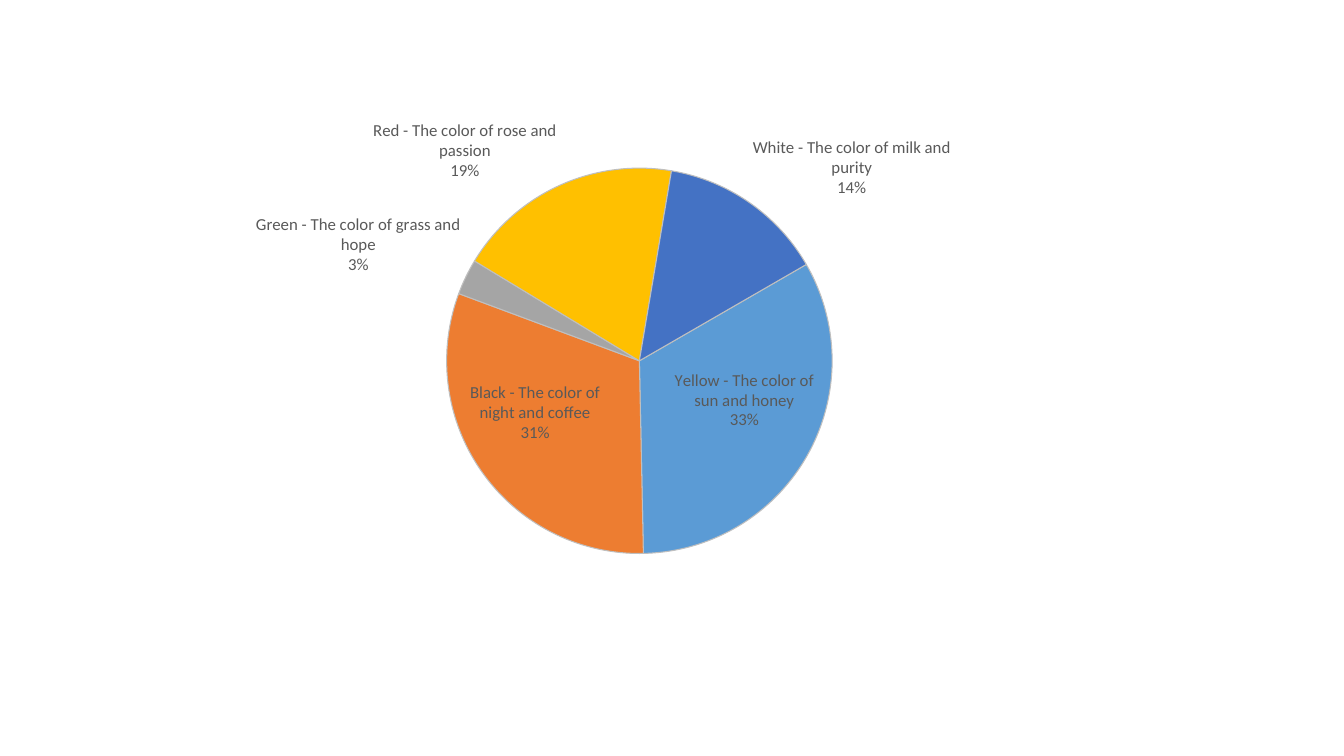
from lxml import etree
from pptx import Presentation
from pptx.chart.data import CategoryChartData
from pptx.dml.color import RGBColor
from pptx.enum.chart import XL_CHART_TYPE, XL_LABEL_POSITION
from pptx.oxml.ns import qn
from pptx.util import Inches, Pt

COLORS = {
    "Yellow - The color of sun and honey": "5B9BD5",
    "Black - The color of night and coffee": "ED7D31",
    "Green - The color of grass and hope": "A5A5A5",
    "Red - The color of rose and passion": "FFC000",
    "White - The color of milk and purity": "4472C4",
    "edge": "BFBFBF",
    "text": "595959",
}
SHARES = [33, 31, 3, 19, 14]
NAMES = list(COLORS)[:len(SHARES)]
PLOT = {"x": 0.333, "y": 0.221, "w": 0.368, "h": 0.529}

deck = Presentation()
deck.slide_width, deck.slide_height = Inches(13.33), Inches(7.5)
slide = deck.slides.add_slide(deck.slide_layouts[6])

# Pie chart
data = CategoryChartData()
data.categories = NAMES
data.add_series("Series 1", SHARES)
chart = slide.shapes.add_chart(
    XL_CHART_TYPE.PIE, Inches(0.97), Inches(0.07), Inches(10.39), Inches(7.23), data
).chart
chart.has_title = False
chart.has_legend = False
chart.font.name = "Calibri"
chart.font.size = Pt(10)
pie = chart.plots[0]
pie.vary_by_categories = True

# Slices
for index, name in enumerate(NAMES):
    look = pie.series[0].points[index].format
    look.fill.solid()
    look.fill.fore_color.rgb = RGBColor.from_string(COLORS[name])
    look.line.color.rgb = RGBColor.from_string(COLORS["edge"])
    look.line.width = Pt(0.75)

# Labels: category above percentage
labels = pie.series[0].data_labels
labels.show_value = False
labels.show_category_name = True
labels.show_percentage = True
labels.number_format = "0%"
labels.number_format_is_linked = False
labels.position = XL_LABEL_POSITION.BEST_FIT
labels.font.name = "Calibri"
labels.font.size = Pt(12)
labels.font.color.rgb = RGBColor.from_string(COLORS["text"])
area = chart.element.find(".//" + qn("c:plotArea"))
gap = etree.Element(qn("c:separator"))
gap.text = "\n"
area.find(".//" + qn("c:dLbls")).find(qn("c:showBubbleSize")).addnext(gap)

# First slice starts at 60 degrees
group = area.find(qn("c:pieChart"))
angle = group.find(qn("c:firstSliceAng"))
if angle is None:
    angle = etree.SubElement(group, qn("c:firstSliceAng"))
angle.set("val", "60")

# Fixed place of the pie within the chart
layout = area.find(qn("c:layout"))
if layout is None:
    layout = etree.Element(qn("c:layout"))
    area.insert(0, layout)
manual = etree.SubElement(layout, qn("c:manualLayout"))
rules = {"layoutTarget": "inner", "xMode": "edge", "yMode": "edge", **PLOT}
for tag, value in rules.items():
    etree.SubElement(manual, qn("c:" + tag)).set("val", str(value))

deck.save("out.pptx")
